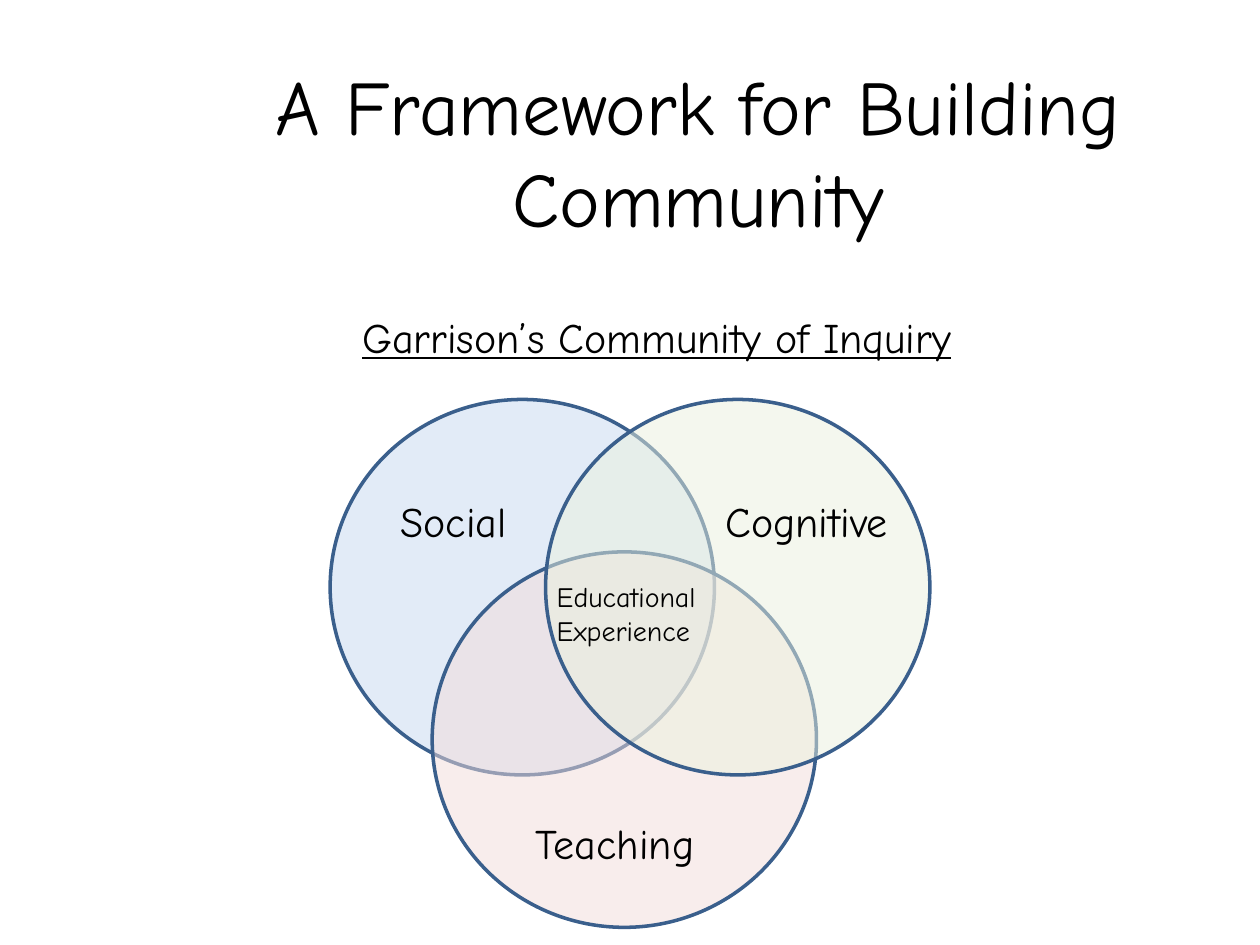
from dataclasses import dataclass

from lxml.etree import SubElement
from pptx import Presentation
from pptx.dml.color import RGBColor as Rgb
from pptx.enum.shapes import MSO_SHAPE as Kind
from pptx.enum.text import MSO_ANCHOR as Anchor, MSO_AUTO_SIZE as Fit, PP_ALIGN as Align
from pptx.oxml.ns import qn
from pptx.shapes.shapetree import GroupShapes, SlideShapes
from pptx.util import Inches, Pt

FONT = "Comic Neue"
HUES = {
    "text": "000000",
    "edge": "3A5F8C",
    "social": "C6D9F1",
    "teach": "F2DCDB",
    "think": "EBF1DE",
}


@dataclass
class Ring:
    left: float
    top: float
    hue: str
    wide: float = 3.05
    high: float = 2.98


@dataclass
class Label:
    text: str
    left: float
    top: float
    wide: float
    high: float = 0.5
    size: int = 24
    align: Align = Align.LEFT
    anchor: Anchor = Anchor.TOP
    wrap: bool = False
    line: bool = False
    fit: Fit = Fit.SHAPE_TO_FIT_TEXT


RINGS = [
    Ring(2.62, 3.17, "social"),
    Ring(3.43, 4.38, "teach"),
    Ring(4.33, 3.17, "think"),
]
HEADS = [
    Label("A Framework for Building Community", 1.08, 0.39, 8.92, 1.61, 44,
          Align.CENTER, Anchor.MIDDLE, wrap=True, fit=Fit.NONE),
    Label("Garrison’s Community of Inquiry", 0.67, 2.42, 9.08, 4.54,
          align=Align.CENTER, wrap=True, line=True, fit=Fit.NONE),
]
NAMES = [
    Label("Social", 3.08, 3.88, 1.15),
    Label("Cognitive", 5.66, 3.88, 1.63),
    Label("Teaching", 4.15, 6.44, 1.61),
    Label("Educational Experience", 4.32, 4.55, 1.45, 0.64, 16, wrap=True),
]


def color(name: str) -> Rgb:
    return Rgb.from_string(HUES[name])


def add_ring(shapes: GroupShapes, ring: Ring) -> None:
    oval = shapes.add_shape(Kind.OVAL, Inches(ring.left), Inches(ring.top),
                            Inches(ring.wide), Inches(ring.high))
    oval.shadow.inherit = False
    oval.fill.solid()
    oval.fill.fore_color.rgb = color(ring.hue)
    tint = oval.fill._xPr.find(qn("a:solidFill"))[0]
    SubElement(tint, qn("a:alpha"), val="50000")
    oval.line.color.rgb = color("edge")
    oval.line.width = Pt(2)


def add_label(shapes: SlideShapes, label: Label) -> None:
    box = shapes.add_textbox(Inches(label.left), Inches(label.top),
                             Inches(label.wide), Inches(label.high))
    frame = box.text_frame
    frame.word_wrap = label.wrap
    frame.auto_size = label.fit
    frame.vertical_anchor = label.anchor
    para = frame.paragraphs[0]
    para.alignment = label.align
    run = para.add_run()
    run.text = label.text
    font = run.font
    font.name = FONT
    font.size = Pt(label.size)
    font.color.rgb = color("text")
    if label.line:
        font.underline = True


def main() -> None:
    """Build the community of inquiry slide."""
    deck = Presentation()
    deck.slide_width, deck.slide_height = Inches(10), Inches(7.5)
    shapes = deck.slides.add_slide(deck.slide_layouts[6]).shapes
    for head in HEADS:
        add_label(shapes, head)
    venn = shapes.add_group_shape()
    for ring in RINGS:
        add_ring(venn.shapes, ring)
    for name in NAMES:
        add_label(shapes, name)
    deck.save("out.pptx")


if __name__ == "__main__":
    main()
